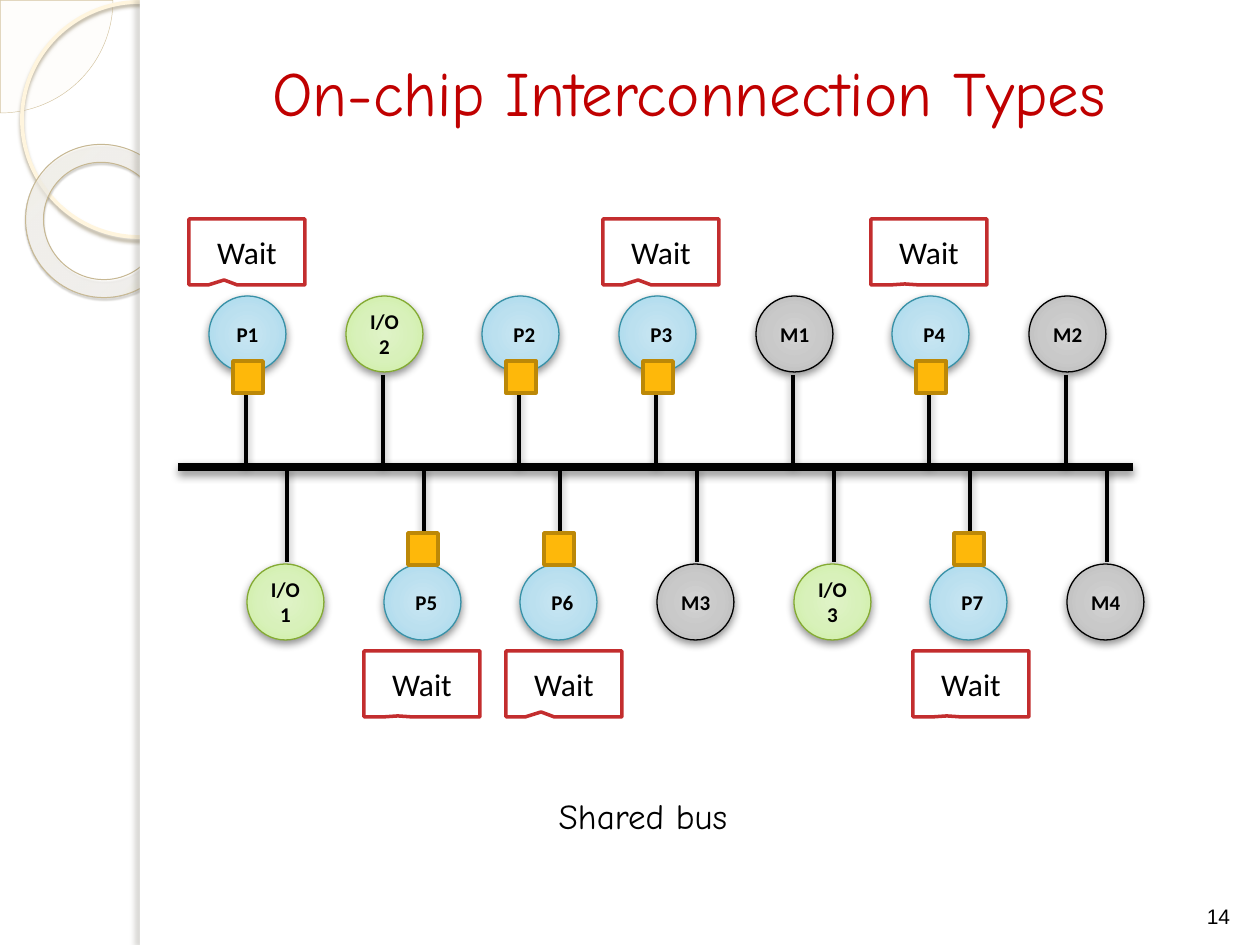
from lxml import etree
from pptx import Presentation
from pptx import util as u
from pptx.dml.color import RGBColor
from pptx.enum import shapes, text
from pptx.oxml.ns import qn

SCALE = u.Inches(1) / 126
WIDTH, HEIGHT = 1260, 945
COLORS = {
    "white": "FFFFFF", "black": "000000", "title": "C00000",
    "token": "FEB80A", "token_line": "BC8807", "wait": "C32D2E",
    "pie": "FEFAF4", "pie_line": "D3C39F", "ring": "FFF5DE",
    "donut_line": "C7B893", "ring_shadow": "B0A68F",
    "donut_shadow": "5A5444", "edge_shadow": "736F63",
    "P": "3891A7", "I": "84AA33", "M": "000000",
}
NODE_STOPS = {
    "P": ["C9E6F2", "BBE0EF", "A4D8ED", "9BD7EE"],
    "I": ["DFF3C7", "D8F1BA", "CDEFA2", "CAF199"],
    "M": ["D3D3D3", "C9C9C9", "B8B8B8", "B2B2B2"],
}
DONUT_STOPS = [(0, "FFFCF6", 70), (70, "FFFEFB", 55), (100, "F0D28E", 60)]
SOFT_SHADOW = ("black", 43, 5, 2, 90)
SHORT, LONG = (-0.197, 0.425), (-0.208, 0.485)
TOP_NODES = ["P1", "I/O\n2", "P2", "P3", "M1", "P4", "M2"]
BOTTOM_NODES = ["I/O\n1", "P5", "P6", "M3", "I/O\n3", "P7", "M4"]
WAITS = {"P1": (-20, SHORT), "P3": (-16, SHORT), "P4": (-21, LONG),
         "P5": (-20, LONG), "P6": (-14, SHORT), "P7": (-17, LONG)}


def px(length):
    """Turn pixels into EMU."""
    return u.Emu(round(length * SCALE))


def rgb(name):
    """Look up a named colour."""
    return RGBColor.from_string(COLORS[name])


def add_element(parent, tag, **attributes):
    """Append a drawing element with its attributes."""
    return etree.SubElement(parent, qn(tag), {key: str(value) for key, value in attributes.items()})


def add_color(parent, value, alpha):
    """Append a colour with its opacity in percent."""
    color = add_element(parent, "a:srgbClr", val=value)
    add_element(color, "a:alpha", val=alpha * 1000)


def add_shadow(effects, color, alpha, blur, distance, angle):
    """Append an outer shadow measured in points and degrees."""
    shadow = add_element(effects, "a:outerShdw", blurRad=u.Pt(blur), dist=u.Pt(distance),
                         dir=angle * 60000, rotWithShape=0)
    add_color(shadow, COLORS[color], alpha)


def set_radial_fill(shape, stops, focus=(50, 50, 50, 50)):
    """Fill a shape with a circular gradient."""
    shape.fill.background()
    properties = shape._element.spPr
    gradient = etree.Element(qn("a:gradFill"), rotWithShape="1")
    stop_list = add_element(gradient, "a:gsLst")
    for position, color, alpha in stops:
        add_color(add_element(stop_list, "a:gs", pos=position * 1000), color, alpha)
    circle = add_element(gradient, "a:path", path="circle")
    sides = {side: value * 1000 for side, value in zip("ltrb", focus)}
    add_element(circle, "a:fillToRect", **sides)
    properties.replace(properties.find(qn("a:noFill")), gradient)


def add_figure(slide, kind, box, fill=None, line=None, weight=1.0, shadow=None, adjust=()):
    """Add a preset shape with its fill, outline and shadow."""
    shape = slide.shapes.add_shape(kind, *map(px, box))
    for index, value in enumerate(adjust):
        shape.adjustments[index] = value
    if fill:
        shape.fill.solid()
        shape.fill.fore_color.rgb = rgb(fill)
    else:
        shape.fill.background()
    if line:
        shape.line.color.rgb = rgb(line)
        shape.line.width = u.Pt(weight)
    else:
        shape.line.fill.background()
    shape.shadow.inherit = False
    if shadow:
        add_shadow(shape._element.spPr.find(qn("a:effectLst")), *shadow)
    return shape


def add_line(slide, start, end, weight):
    """Add a black shadowed line."""
    line = slide.shapes.add_connector(shapes.MSO_CONNECTOR.STRAIGHT, *map(px, start + end))
    line.line.color.rgb = rgb("black")
    line.line.width = u.Pt(weight)
    add_shadow(add_element(line._element.spPr, "a:effectLst"), *SOFT_SHADOW)


def write(shape, words, size, font="Calibri", color="black", bold=False,
          align=text.PP_ALIGN.CENTER, anchor=text.MSO_ANCHOR.MIDDLE):
    """Write formatted text, one paragraph a line."""
    frame = shape.text_frame
    frame.word_wrap = True
    frame.vertical_anchor = anchor
    frame.text = words
    for paragraph in frame.paragraphs:
        paragraph.alignment = align
        for run in paragraph.runs:
            run.font.name, run.font.size, run.font.bold = font, u.Pt(size), bold
            run.font.color.rgb = rgb(color)


def add_label(slide, box, words, size, **style):
    """Add a text box."""
    write(slide.shapes.add_textbox(*map(px, box)), words, size, **style)


def add_decoration(slide, left, top, width, height):
    """Draw the ringed margin and the white page beside it."""
    kinds = shapes.MSO_SHAPE
    add_figure(slide, kinds.PIE, (left - 112, top - 112, 225, 225), "pie", "pie_line", 0.25,
               adjust=(0, 54.02))
    pie_color = slide.shapes[-1]._element.spPr.find(qn("a:solidFill"))[0]
    add_element(pie_color, "a:alpha", val=33000)
    add_figure(slide, kinds.OVAL, (left + 22, top + 2, 235, 235), None, "ring", 2.15,
               ("ring_shadow", 85, 2, 2, 90))
    donut = add_figure(slide, kinds.DONUT, (left + 25, top + 145, 155, 152), None, "donut_line",
                       0.58, ("donut_shadow", 35, 1, 1.2, 75), (0.118,))
    donut.rotation = 38.6
    set_radial_fill(donut, DONUT_STOPS, (-408, -50, 508, 150))
    page = left + 140
    add_figure(slide, kinds.RECTANGLE, (page, top, width - 140, height), "white")
    add_figure(slide, kinds.RECTANGLE, (page, top, 10, height), "white",
               shadow=("edge_shadow", 25, 3, 3, 180))


def add_node(slide, left, top, name):
    """Draw one processor, memory or I/O node."""
    kind = name[0]
    node = add_figure(slide, shapes.MSO_SHAPE.OVAL, (left, top, 77, 76), None, kind, 0.75,
                      SOFT_SHADOW)
    set_radial_fill(node, [(position, color, 100) for position, color
                           in zip((0, 50, 97, 100), NODE_STOPS[kind])])
    centered = kind == "I" or name == "P1"
    align = text.PP_ALIGN.CENTER if centered else text.PP_ALIGN.RIGHT
    write(node, name, 12, bold=True, align=align)


def add_row(slide, left, top, names, bus, above):
    """Draw a row of nodes with stems, tokens and wait callouts."""
    stem_end, stem_x = (top + 79, 37) if above else (top - 2, 40)
    token_top = top + 65 if above else top - 31
    wait_top = top - 77 if above else top + 87
    for index, name in enumerate(names):
        x = left + round(index * 820 / 6)
        add_line(slide, (x + stem_x, stem_end), (x + stem_x, bus), 2)
        add_node(slide, x, top, name)
        if name[0] == "P":
            add_figure(slide, shapes.MSO_SHAPE.RECTANGLE, (x + 24, token_top, 30, 32),
                       "token", "token_line", 2)
        if name in WAITS:
            offset, tail = WAITS[name]
            callout = add_figure(slide, shapes.MSO_SHAPE.RECTANGULAR_CALLOUT,
                                 (x + offset, wait_top, 116, 66), "white", "wait", 2, adjust=tail)
            write(callout, "Wait", 18)


def add_bus_diagram(slide, left, top):
    """Draw the shared bus with a row of nodes on either side."""
    bus = top + 248
    add_line(slide, (left + 955, bus), (left, bus), 4.5)
    add_row(slide, left + 31, top + 77, TOP_NODES, bus, True)
    add_row(slide, left + 69, top + 345, BOTTOM_NODES, bus, False)


def main():
    """Build and save the slide."""
    presentation = Presentation()
    presentation.slide_width, presentation.slide_height = px(WIDTH), px(HEIGHT)
    slide = presentation.slides.add_slide(presentation.slide_layouts[6])
    add_decoration(slide, 0, 0, WIDTH, HEIGHT)
    add_label(slide, (1187, 869, 63, 66), "14", 12, font="Arial", anchor=text.MSO_ANCHOR.BOTTOM)
    add_label(slide, (481, 788, 324, 55), "Shared bus", 20, font="Comic Neue",
              anchor=text.MSO_ANCHOR.TOP)
    add_bus_diagram(slide, 178, 219)
    add_label(slide, (185, 21, 1008, 141), "On-chip Interconnection Types", 36,
              font="Comic Neue", color="title")
    presentation.save("out.pptx")


if __name__ == "__main__":
    main()
